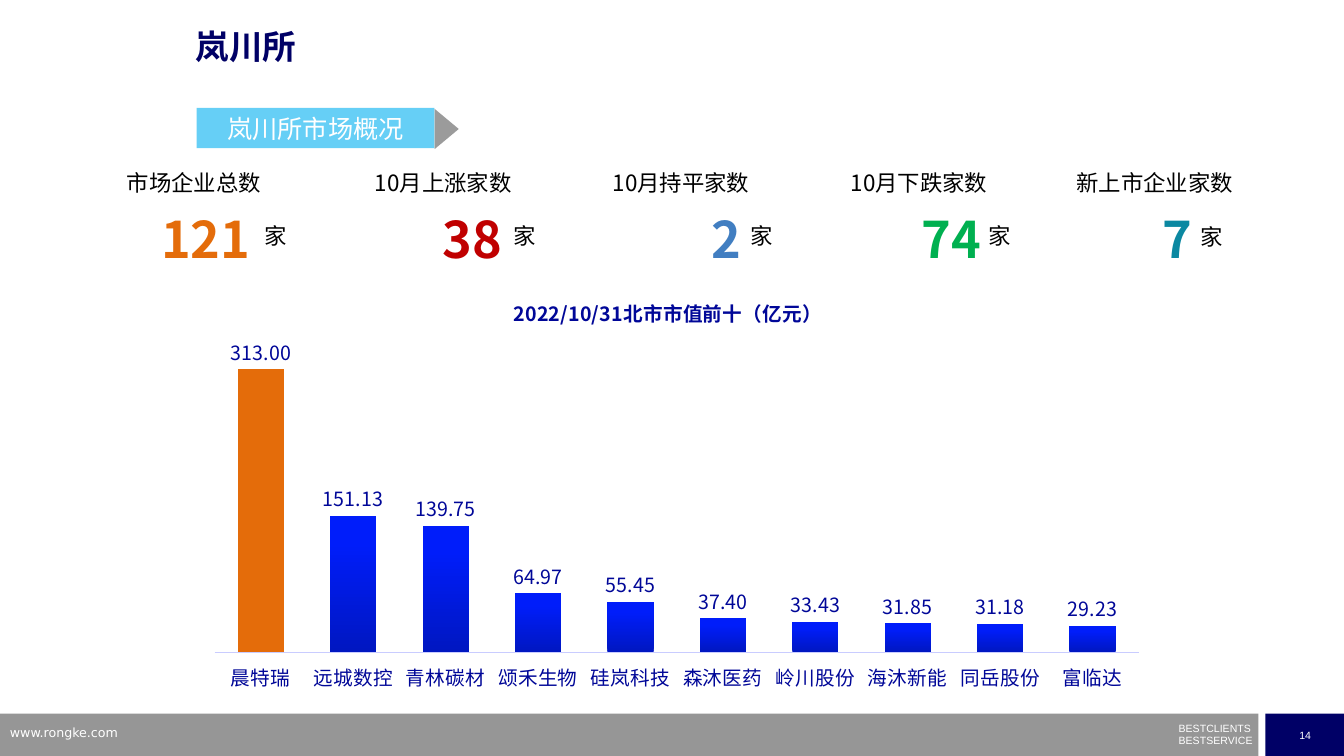
from dataclasses import dataclass

from lxml.etree import SubElement
from pptx import Presentation
from pptx.chart.data import CategoryChartData
from pptx.dml.color import RGBColor
from pptx.enum.chart import XL_CHART_TYPE, XL_LABEL_POSITION, XL_TICK_LABEL_POSITION, XL_TICK_MARK
from pptx.enum.shapes import MSO_SHAPE
from pptx.enum.text import MSO_ANCHOR, PP_ALIGN
from pptx.oxml import parse_xml
from pptx.oxml.ns import nsdecls, qn
from pptx.util import Inches, Pt


@dataclass(frozen=True)
class Theme:
    cjk: str = "Noto Sans CJK SC"
    footer_font: str = "Arial"
    web_font: str = "DejaVu Sans"
    navy: str = "000066"
    footer_gray: str = "969696"
    banner_blue: str = "00B0F0"
    arrow_gray: str = "595959"
    white: str = "FFFFFF"
    black: str = "000000"
    orange: str = "E46C0A"
    red: str = "C00000"
    blue: str = "417EC1"
    green: str = "00B050"
    teal: str = "0B88A1"
    chart_text: str = "000798"
    axis_line: str = "C9CCFF"
    bar_bottom: str = "0017C1"
    bar_top: str = "001DFA"
    title_size: float = 24
    banner_size: float = 18
    label_size: float = 16
    number_size: float = 36
    chart_size: float = 14
    web_size: float = 9
    footer_size: float = 7.5


THEME = Theme()

# label, label left, label width, unit left, unit top, number, number left, number width, alignment, colour
METRICS = [
    ("市场企业总数", 1.16, 2.16, 2.53, 2.15, "121", 1.5, 1.23, PP_ALIGN.LEFT, THEME.orange),
    ("10月上涨家数", 3.62, 1.59, 4.99, 2.15, "38", 4.21, 0.87, PP_ALIGN.RIGHT, THEME.red),
    ("10月持平家数", 5.98, 1.59, 7.35, 2.15, "2", 6.96, 0.87, PP_ALIGN.LEFT, THEME.blue),
    ("10月下跌家数", 8.34, 1.59, 9.71, 2.15, "74", 9.04, 0.87, PP_ALIGN.LEFT, THEME.green),
    ("新上市企业家数", 10.58, 1.77, 11.81, 2.16, "7", 11.14, 0.78, PP_ALIGN.RIGHT, THEME.teal),
]

MARKET_VALUES = {
    "晨特瑞": 313.00,
    "远城数控": 151.13,
    "青林碳材": 139.75,
    "颂禾生物": 64.97,
    "硅岚科技": 55.45,
    "森沐医药": 37.40,
    "岭川股份": 33.43,
    "海沐新能": 31.85,
    "同岳股份": 31.18,
    "富临达": 29.23,
}


def rgb(color):
    return RGBColor.from_string(color)


def style_font(font, size, color, name=THEME.cjk, bold=False):
    """Set a font, for Latin and East Asian letters alike."""
    font.size, font.bold, font.name = Pt(size), bold, name
    font.color.rgb = rgb(color)
    SubElement(font._rPr, qn("a:ea")).set("typeface", name)


def write_line(paragraph, text, size, color, name=THEME.cjk, bold=False, align=PP_ALIGN.LEFT):
    paragraph.alignment = align
    run = paragraph.add_run()
    run.text = text
    style_font(run.font, size, color, name, bold)


def add_frame(slide, left, top, width, height, inset=True):
    frame = slide.shapes.add_textbox(Inches(left), Inches(top), Inches(width), Inches(height)).text_frame
    frame.word_wrap = True
    if not inset:
        frame.margin_left = frame.margin_right = frame.margin_top = frame.margin_bottom = 0
    return frame


def add_block(slide, preset, left, top, width, height, color, opacity=100):
    block = slide.shapes.add_shape(preset, Inches(left), Inches(top), Inches(width), Inches(height))
    block.shadow.inherit = False
    block.fill.solid()
    block.fill.fore_color.rgb = rgb(color)
    block.line.fill.background()
    if opacity < 100:
        fill_color = block._element.spPr.find(".//" + qn("a:srgbClr"))
        SubElement(fill_color, qn("a:alpha")).set("val", str(opacity * 1000))
    block.text_frame.vertical_anchor = MSO_ANCHOR.MIDDLE
    return block


def add_footer(slide):
    add_block(slide, MSO_SHAPE.RECTANGLE, 0, 7.08, 12.48, 0.42, THEME.footer_gray)
    page = add_block(slide, MSO_SHAPE.RECTANGLE, 12.55, 7.08, 0.79, 0.42, THEME.navy).text_frame
    page.word_wrap = False
    write_line(page.paragraphs[0], "14", THEME.footer_size, THEME.white, THEME.footer_font,
               align=PP_ALIGN.CENTER)

    slogan = add_frame(slide, 11.69, 7.22, 0.76, 0.2, inset=False)
    second_line = slogan.add_paragraph()
    second_line.space_before = Pt(4)
    for paragraph, words in zip(slogan.paragraphs, ("BESTCLIENTS", "BESTSERVICE")):
        paragraph.line_spacing = 0.5
        write_line(paragraph, words, THEME.footer_size, THEME.white, THEME.footer_font)

    website = add_frame(slide, 0, 7.14, 3.2, 0.26)
    write_line(website.paragraphs[0], "www.rongke.com", THEME.web_size, THEME.white, THEME.web_font)


def add_heading(slide):
    title = add_frame(slide, 1.94, 0.3, 9, 0.39, inset=False).paragraphs[0]
    title.line_spacing = 0.9
    write_line(title, "岚川所", THEME.title_size, THEME.navy, bold=True)

    banner = add_block(slide, MSO_SHAPE.RECTANGLE, 1.95, 1.07, 2.36, 0.4, THEME.banner_blue, 60)
    write_line(banner.text_frame.paragraphs[0], "岚川所市场概况", THEME.banner_size, THEME.white,
               align=PP_ALIGN.CENTER)
    arrow = add_block(slide, MSO_SHAPE.ISOSCELES_TRIANGLE, 4.23, 1.16, 0.4, 0.24, THEME.arrow_gray, 60)
    arrow.rotation = 90


def add_metric(slide, label, label_left, label_width, unit_left, unit_top,
               number, number_left, number_width, align, color):
    caption = add_frame(slide, label_left, 1.63, label_width, 0.37)
    write_line(caption.paragraphs[0], label, THEME.label_size, THEME.black)
    unit = add_frame(slide, unit_left, unit_top, 0.6, 0.37)
    write_line(unit.paragraphs[0], "家", THEME.label_size, THEME.black)
    count = add_frame(slide, number_left, 2.02, number_width, 0.71)
    write_line(count.paragraphs[0], number, THEME.number_size, color, bold=True, align=align)


def manual_layout(x, y, width=None, height=None):
    """Build a chart layout in fractions of the chart; a size makes it an inner plot area."""
    parts = {"xMode": "edge", "yMode": "edge", "x": x, "y": y}
    if width:
        parts = {"layoutTarget": "inner", **parts, "w": width, "h": height}
    body = "".join(f'<c:{tag} val="{value}"/>' for tag, value in parts.items())
    return parse_xml(f'<c:layout {nsdecls("c")}><c:manualLayout>{body}</c:manualLayout></c:layout>')


def replace_layout(parent, layout, position):
    for old_layout in parent.findall(qn("c:layout")):
        parent.remove(old_layout)
    parent.insert(position, layout)


def add_market_chart(slide):
    data = CategoryChartData(number_format="#,##0.00")
    data.categories = list(MARKET_VALUES)
    data.add_series("市值", list(MARKET_VALUES.values()))
    chart = slide.shapes.add_chart(XL_CHART_TYPE.COLUMN_CLUSTERED, Inches(1.94), Inches(2.73),
                                   Inches(9.45), Inches(4.3), data).chart
    style_font(chart.font, THEME.chart_size, THEME.black)
    chart.has_legend = False
    write_line(chart.chart_title.text_frame.paragraphs[0], "2022/10/31北市市值前十（亿元）",
               THEME.chart_size, THEME.chart_text, bold=True, align=PP_ALIGN.CENTER)
    replace_layout(chart.chart_title._element, manual_layout(0.33, 0.04), 1)
    replace_layout(chart._chartSpace.chart.plotArea, manual_layout(0.02, 0.14, 0.97, 0.73), 0)

    companies, values = chart.category_axis, chart.value_axis
    companies.major_tick_mark = XL_TICK_MARK.NONE
    companies.tick_label_position = XL_TICK_LABEL_POSITION.LOW
    companies.format.line.color.rgb = rgb(THEME.axis_line)
    companies.format.line.width = Pt(0.75)
    style_font(companies.tick_labels.font, THEME.chart_size, THEME.chart_text)
    values.minimum_scale, values.maximum_scale = 0, 350
    values.has_major_gridlines = False
    values.visible = False

    plot = chart.plots[0]
    plot.gap_width, plot.overlap, plot.vary_by_categories = 100, -24, False
    bars = plot.series[0]
    bars.invert_if_negative = False
    bars.format.fill.gradient()
    bars.format.fill.gradient_angle = 90
    shades = ((0, THEME.bar_bottom), (0.8, THEME.bar_top))
    for stop, (position, color) in zip(bars.format.fill.gradient_stops, shades):
        stop.position = position
        stop.color.rgb = rgb(color)
    leader = bars.points[0].format.fill
    leader.solid()
    leader.fore_color.rgb = rgb(THEME.orange)

    labels = bars.data_labels
    labels.show_value = True
    labels.position = XL_LABEL_POSITION.OUTSIDE_END
    labels.number_format, labels.number_format_is_linked = "#,##0.00", False
    style_font(labels.font, THEME.chart_size, THEME.chart_text)


def main():
    deck = Presentation()
    deck.slide_width, deck.slide_height = Inches(13.33), Inches(7.5)
    slide = deck.slides.add_slide(deck.slide_layouts[6])
    add_footer(slide)
    add_heading(slide)
    for metric in METRICS:
        add_metric(slide, *metric)
    add_market_chart(slide)
    deck.save("out.pptx")


if __name__ == "__main__":
    main()
